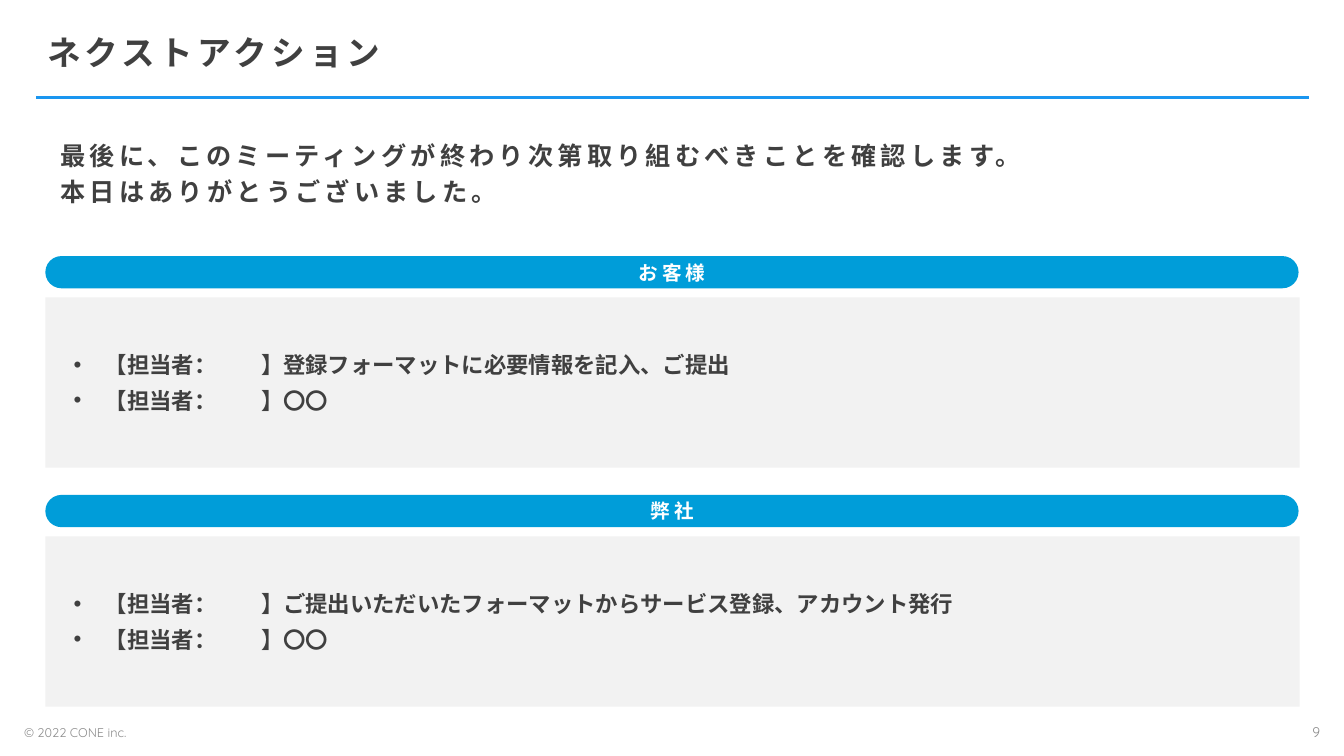
from dataclasses import dataclass

from lxml.etree import SubElement
from pptx import Presentation
from pptx.dml.color import RGBColor
from pptx.enum.shapes import MSO_CONNECTOR as Line, MSO_SHAPE as Shape
from pptx.enum.text import MSO_ANCHOR as Anchor, PP_ALIGN as Align
from pptx.oxml.ns import qn
from pptx.util import Inches, Pt

TITLE = "ネクストアクション"
LEAD = [
    "最後に、このミーティングが終わり次第取り組むべきことを確認します。",
    "本日はありがとうございました。",
]
OWNER = "【担当者：　　】"
GROUPS = [
    ("お客様", ["登録フォーマットに必要情報を記入、ご提出", "〇〇"]),
    ("弊社", ["ご提出いただいたフォーマットからサービス登録、アカウント発行", "〇〇"]),
]
CREDIT = "© 2022 CONE inc."
PAGE = "9"


@dataclass(frozen=True)
class Theme:
    ink: str = "404040"
    mute: str = "8C8C8C"
    white: str = "FFFFFF"
    rule: str = "1A96F0"
    pill: str = "009DD9"
    card: str = "F2F2F2"
    main: str = "Quicksand"
    sub: str = "TeX Gyre Adventor"
    title: int = 24
    lead: int = 18
    item: int = 16
    head: int = 14
    page: int = 10
    credit: int = 9


T = Theme()
LEFT, TOP, PITCH = 0.45, 2.54, 2.37
PILL_W, PILL_H = 12.43, 0.32
CARD_W, CARD_H, CARD_DROP = 12.44, 1.69, 0.41
INDENT = 0.31
FOOT_Y, FOOT_W, FOOT_H = 7.13, 3, 0.27


def rgb(code):
    return RGBColor.from_string(code)


def write(shape, lines, size, color, face, bold=True, track=0, align=Align.LEFT,
          anchor=Anchor.MIDDLE, inset=(0.1, 0.05, 0.1, 0.05), wrap=True,
          gap=0, lead=None, bullet=False):
    """Fill a shape with one paragraph per line; track is letter spacing in points."""
    frame = shape.text_frame
    frame.word_wrap = wrap
    frame.vertical_anchor = anchor
    (frame.margin_left, frame.margin_top,
     frame.margin_right, frame.margin_bottom) = map(Inches, inset)
    for i, line in enumerate(lines):
        para = frame.add_paragraph() if i else frame.paragraphs[0]
        para.alignment = align
        if lead:
            para.line_spacing = lead
        para.space_before = Pt(gap if i else 0)
        if bullet:
            props = para._p.get_or_add_pPr()
            props.set("marL", str(Inches(INDENT)))
            props.set("indent", str(-Inches(INDENT)))
            SubElement(props, qn("a:buFont")).set("typeface", "Arial")
            SubElement(props, qn("a:buChar")).set("char", "•")
        run = para.add_run()
        run.text = line
        font = run.font
        font.name, font.size, font.bold = face, Pt(size), bold
        font.color.rgb = rgb(color)
        if track:
            run._r.get_or_add_rPr().set("spc", str(track * 100))


def add_text(slide, box, lines, *style, **more):
    write(slide.shapes.add_textbox(*map(Inches, box)), lines, *style, **more)


def add_block(slide, box, fill, curve):
    block = slide.shapes.add_shape(Shape.ROUNDED_RECTANGLE, *map(Inches, box))
    block.adjustments[0] = curve
    block.shadow.inherit = False
    block.fill.solid()
    block.fill.fore_color.rgb = rgb(fill)
    block.line.fill.background()
    return block


def add_rule(slide):
    rule = slide.shapes.add_connector(
        Line.STRAIGHT, *map(Inches, (0.36, 0.97, 12.98, 0.97)))
    rule.line.color.rgb = rgb(T.rule)
    rule.line.width = Pt(2)
    SubElement(rule._element.spPr, qn("a:effectLst"))


def add_group(slide, top, name, tasks):
    pill = add_block(slide, (LEFT, top, PILL_W, PILL_H), T.pill, 0.5)
    write(pill, [name], T.head, T.white, T.sub, track=3,
          align=Align.CENTER, wrap=False)
    card = add_block(slide, (LEFT, top + CARD_DROP, CARD_W, CARD_H), T.card, 0)
    write(card, [OWNER + task for task in tasks], T.item, T.ink, T.sub,
          inset=(0.28, 0.05, 0.1, 0.05), gap=6, bullet=True)


def main():
    deck = Presentation()
    deck.slide_width, deck.slide_height = Inches(13.33), Inches(7.5)
    slide = deck.slides.add_slide(deck.slide_layouts[6])
    add_rule(slide)
    add_text(slide, (0.37, 0.21, 12.52, 0.63), [TITLE], T.title, T.ink, T.main,
             track=3, lead=0.9, inset=(0.1, 0.08, 0.1, 0.05))
    add_text(slide, (0.5, 1.27, 12.33, 0.91), LEAD, T.lead, T.ink, T.main,
             track=3, lead=0.9, gap=6, anchor=Anchor.TOP,
             inset=(0.1, 0.16, 0.1, 0.05))
    for i, (name, tasks) in enumerate(GROUPS):
        add_group(slide, TOP + i * PITCH, name, tasks)
    for x, text, size, align in [(0.14, CREDIT, T.credit, Align.LEFT),
                                 (10.19, PAGE, T.page, Align.RIGHT)]:
        add_text(slide, (x, FOOT_Y, FOOT_W, FOOT_H), [text], size, T.mute,
                 T.main, bold=False, align=align)
    deck.save("out.pptx")


if __name__ == "__main__":
    main()
